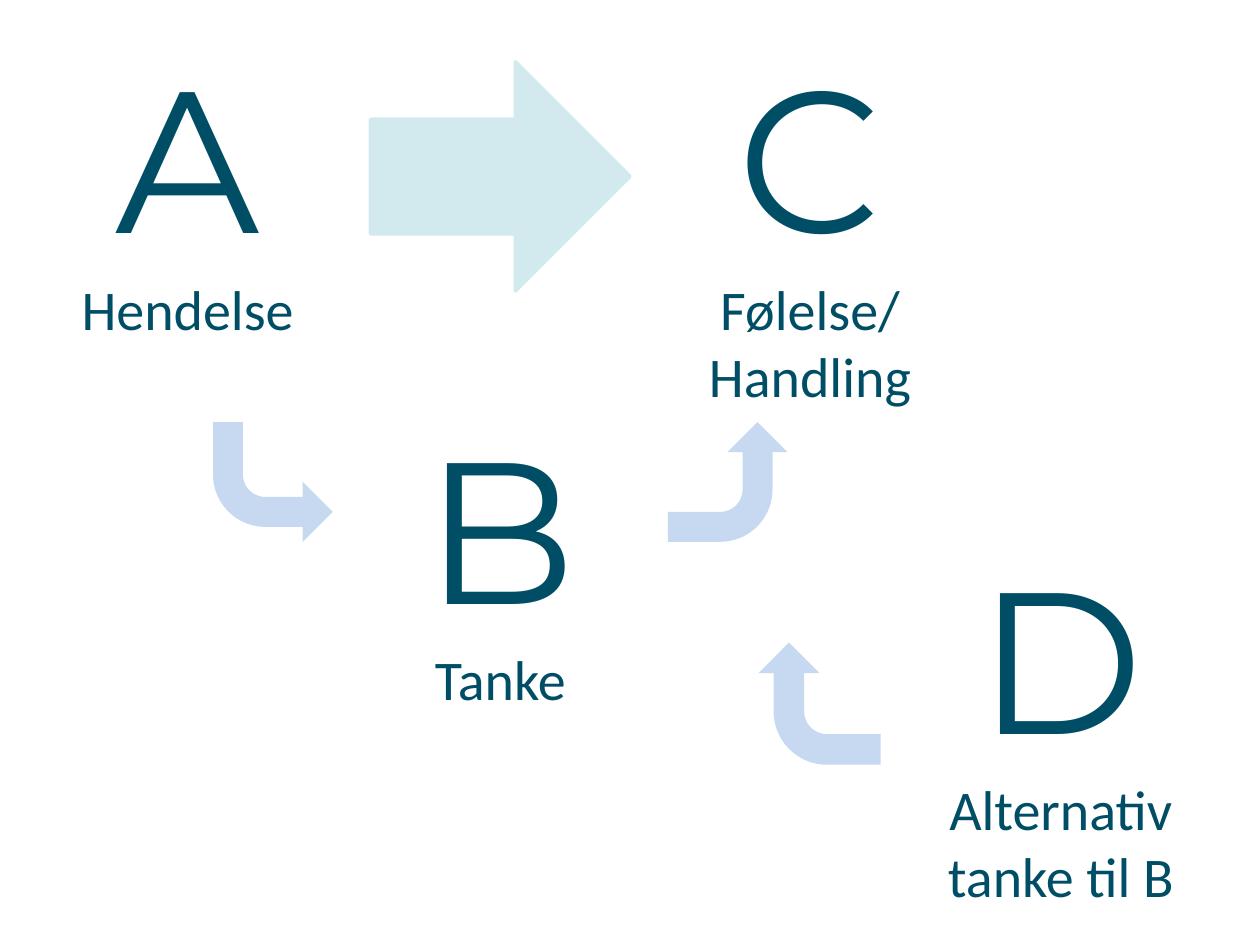
"""Build the ABCD slide: event, thought, feeling and alternative thought."""
from dataclasses import dataclass

from lxml import etree
from pptx import Presentation
from pptx import util as u
from pptx.dml.color import RGBColor
from pptx.enum import shapes, text


@dataclass(frozen=True)
class Theme:
    ink: RGBColor = RGBColor(0x00, 0x4E, 0x66)
    main_arrow: RGBColor = RGBColor(0xD2, 0xEA, 0xEE)
    bent_arrow: RGBColor = RGBColor(0xC6, 0xD9, 0xF1)
    letter_font: str = "Montserrat"
    label_font: str = "Calibri"
    letter_size: int = 115
    label_size: int = 32


theme = Theme()


def add_run(paragraph, words, font_name, size):
    run = paragraph.add_run()
    run.text = words
    run.font.name = font_name
    run.font.size = u.Pt(size)
    run.font.color.rgb = theme.ink


def add_arrow(slide, preset, box, rotation, color):
    shape = slide.shapes.add_shape(preset, *[u.Pt(length) for length in box])
    shape.rotation = rotation
    shape.shadow.inherit = False
    shape.fill.solid()
    shape.fill.fore_color.rgb = color
    shape.line.fill.background()
    return shape


presentation = Presentation()
presentation.slide_width = u.Pt(720)
presentation.slide_height = u.Pt(540)
slide = presentation.slides.add_slide(presentation.slide_layouts[6])

main_arrow = add_arrow(
    slide, shapes.MSO_SHAPE.LEFT_ARROW, (211.7, 35.3, 148.3, 131), 180, theme.main_arrow
)
main_arrow.line.color.rgb = theme.main_arrow
main_arrow.line.width = u.Pt(2)
line_element = main_arrow.line._get_or_add_ln()
etree.SubElement(
    line_element, "{http://schemas.openxmlformats.org/drawingml/2006/main}round"
)

steps = [
    ("A", ["Hendelse"], 14.4, 11.5, 185.8),
    ("C", ["Følelse/", "Handling"], 371.5, 11.5, 182.9),
    ("B", ["Tanke"], 193, 223.2, 185.8),
    ("D", ["Alternativ tanke til B"], 503.3, 297.4, 205.9),
]
for letter, label_lines, left, top, width in steps:
    box = slide.shapes.add_textbox(u.Pt(left), u.Pt(top), u.Pt(width), u.Pt(218.9))
    frame = box.text_frame
    frame.word_wrap = True
    frame.vertical_anchor = text.MSO_ANCHOR.TOP
    frame.margin_left = frame.margin_right = u.Pt(7.2)
    frame.margin_top = frame.margin_bottom = u.Pt(7.2)
    heading = frame.paragraphs[0]
    heading.alignment = text.PP_ALIGN.CENTER
    add_run(heading, letter, theme.letter_font, theme.letter_size)
    label = frame.add_paragraph()
    label.alignment = text.PP_ALIGN.CENTER
    for index, line in enumerate(label_lines):
        if index:
            label.add_line_break()
        add_run(label, line, theme.label_font, theme.label_size)

bent_arrows = [
    (121.7, 241.2, 68.4, 180, True),
    (381.6, 241.2, 68.4, 90, True),
    (433.4, 367.2, 69.8, 270, False),
]
for left, top, side, rotation, flipped in bent_arrows:
    bent_arrow = add_arrow(
        slide,
        shapes.MSO_SHAPE.BENT_ARROW,
        (left, top, side, side),
        rotation,
        theme.bent_arrow,
    )
    if flipped:
        bent_arrow._element.spPr.xfrm.set("flipH", "1")

presentation.save("out.pptx")
